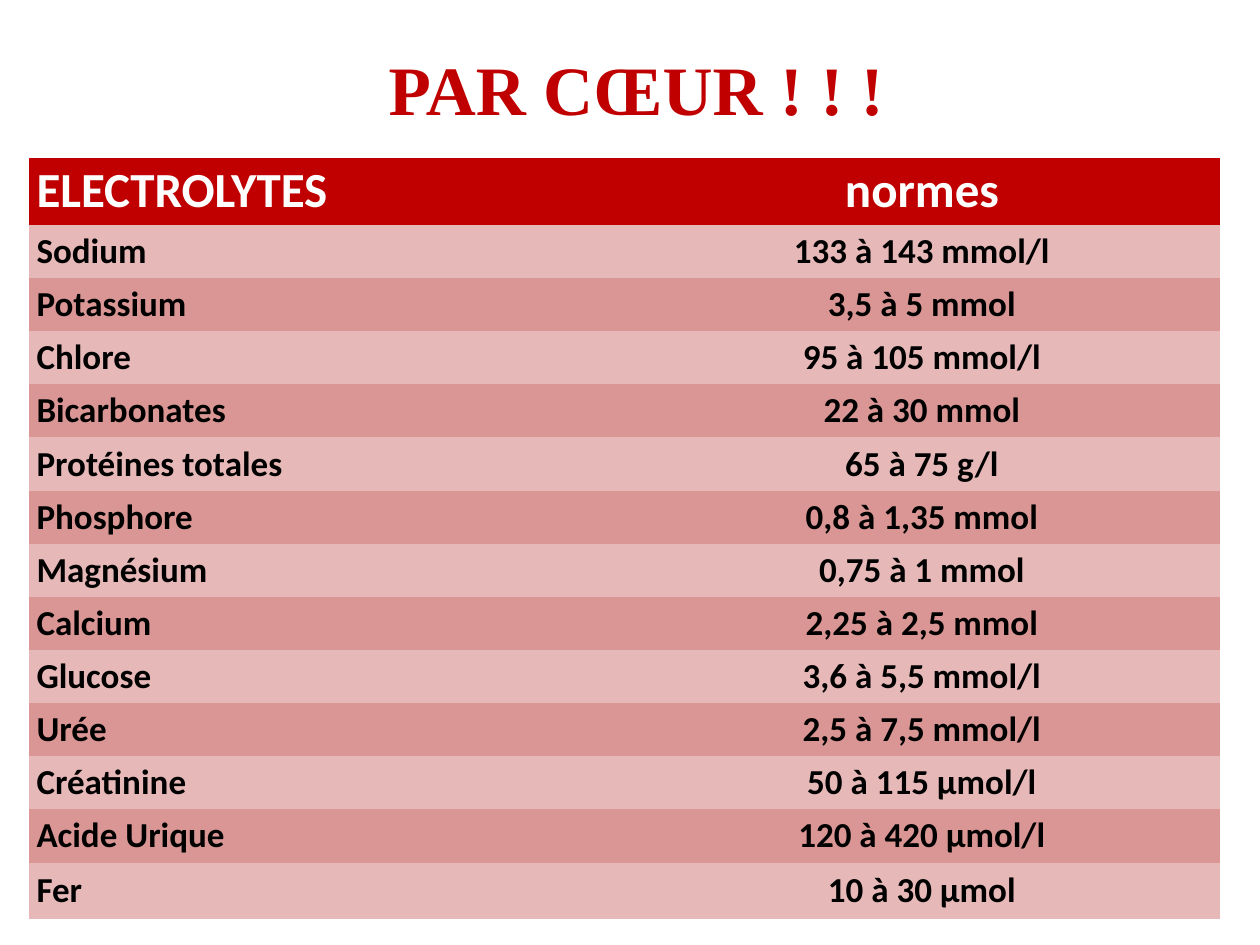
import pptx
import pptx.dml.color
import pptx.enum.text
import pptx.util

TITLE = "PAR CŒUR ! ! !"
ROWS = [
    ("ELECTROLYTES", "normes"),
    ("Sodium", "133 à 143 mmol/l"),
    ("Potassium", "3,5 à 5 mmol"),
    ("Chlore", "95 à 105 mmol/l"),
    ("Bicarbonates", "22 à 30 mmol"),
    ("Protéines totales", "65 à 75 g/l"),
    ("Phosphore", "0,8 à 1,35 mmol"),
    ("Magnésium", "0,75 à 1 mmol"),
    ("Calcium", "2,25 à 2,5 mmol"),
    ("Glucose", "3,6 à 5,5 mmol/l"),
    ("Urée", "2,5 à 7,5 mmol/l"),
    ("Créatinine", "50 à 115 µmol/l"),
    ("Acide Urique", "120 à 420 µmol/l"),
    ("Fer", "10 à 30 µmol"),
]

RED = "C00000"
BANDS = ("D99694", "E6B9B8")
TITLE_FONT = {"name": "Times New Roman", "size": pptx.util.Pt(39.6), "bold": True}
HEADER_FONT = {"name": "Calibri", "size": pptx.util.Pt(28), "bold": True}
BODY_FONT = {**HEADER_FONT, "size": pptx.util.Pt(20)}
CELL_FORMAT = {
    "margin_left": pptx.util.Inches(0.06),
    "margin_right": pptx.util.Inches(0.06),
    "margin_top": pptx.util.Inches(0.03),
    "margin_bottom": pptx.util.Inches(0.03),
    "vertical_anchor": pptx.enum.text.MSO_ANCHOR.MIDDLE,
}
ALIGNMENTS = (pptx.enum.text.PP_ALIGN.LEFT, pptx.enum.text.PP_ALIGN.CENTER)
NO_STYLE_NO_GRID = "{2D5ABB26-0587-4C30-8999-92F81FD0307C}"

TABLE_BOX = (0.23, 1.25, 9.45, 6.04)
HEADER_HEIGHT, LAST_HEIGHT = 0.53, 0.45


def color(hex_value):
    return pptx.dml.color.RGBColor.from_string(hex_value)


def apply_format(target, values):
    for name, value in values.items():
        setattr(target, name, value)


def write_text(text_frame, text, font, hex_value, alignment):
    paragraph = text_frame.paragraphs[0]
    paragraph.alignment = alignment
    run = paragraph.add_run()
    run.text = text
    apply_format(run.font, font)
    run.font.color.rgb = color(hex_value)


def add_title(slide):
    title = slide.shapes.title
    apply_format(title, {
        "left": pptx.util.Inches(0.55), "top": pptx.util.Inches(0.23),
        "width": pptx.util.Inches(9), "height": pptx.util.Inches(0.94),
    })
    title.text_frame.vertical_anchor = pptx.enum.text.MSO_ANCHOR.MIDDLE
    write_text(title.text_frame, TITLE, TITLE_FONT, RED, pptx.enum.text.PP_ALIGN.CENTER)


def add_norms_table(slide):
    box = [pptx.util.Inches(length) for length in TABLE_BOX]
    table = slide.shapes.add_table(len(ROWS), len(ALIGNMENTS), *box).table
    table.horz_banding = False
    table._tbl.tblPr.find(pptx.oxml.ns.qn("a:tableStyleId")).text = NO_STYLE_NO_GRID

    body_height = (TABLE_BOX[3] - HEADER_HEIGHT - LAST_HEIGHT) / (len(ROWS) - 2)
    heights = [HEADER_HEIGHT] + [body_height] * (len(ROWS) - 2) + [LAST_HEIGHT]
    for index, (texts, height) in enumerate(zip(ROWS, heights)):
        table.rows[index].height = pptx.util.Inches(height)
        if index == 0:
            fill, font, text_color = RED, HEADER_FONT, "FFFFFF"
        else:
            fill, font, text_color = BANDS[index % 2], BODY_FONT, "000000"
        for column, (text, alignment) in enumerate(zip(texts, ALIGNMENTS)):
            cell = table.cell(index, column)
            apply_format(cell, CELL_FORMAT)
            cell.fill.solid()
            cell.fill.fore_color.rgb = color(fill)
            write_text(cell.text_frame, text, font, text_color, alignment)


def main():
    presentation = pptx.Presentation()
    presentation.slide_width = pptx.util.Inches(10)
    presentation.slide_height = pptx.util.Inches(7.5)
    slide = presentation.slides.add_slide(presentation.slide_layouts.get_by_name("Title Only"))
    add_title(slide)
    add_norms_table(slide)
    presentation.save("out.pptx")


if __name__ == "__main__":
    main()
